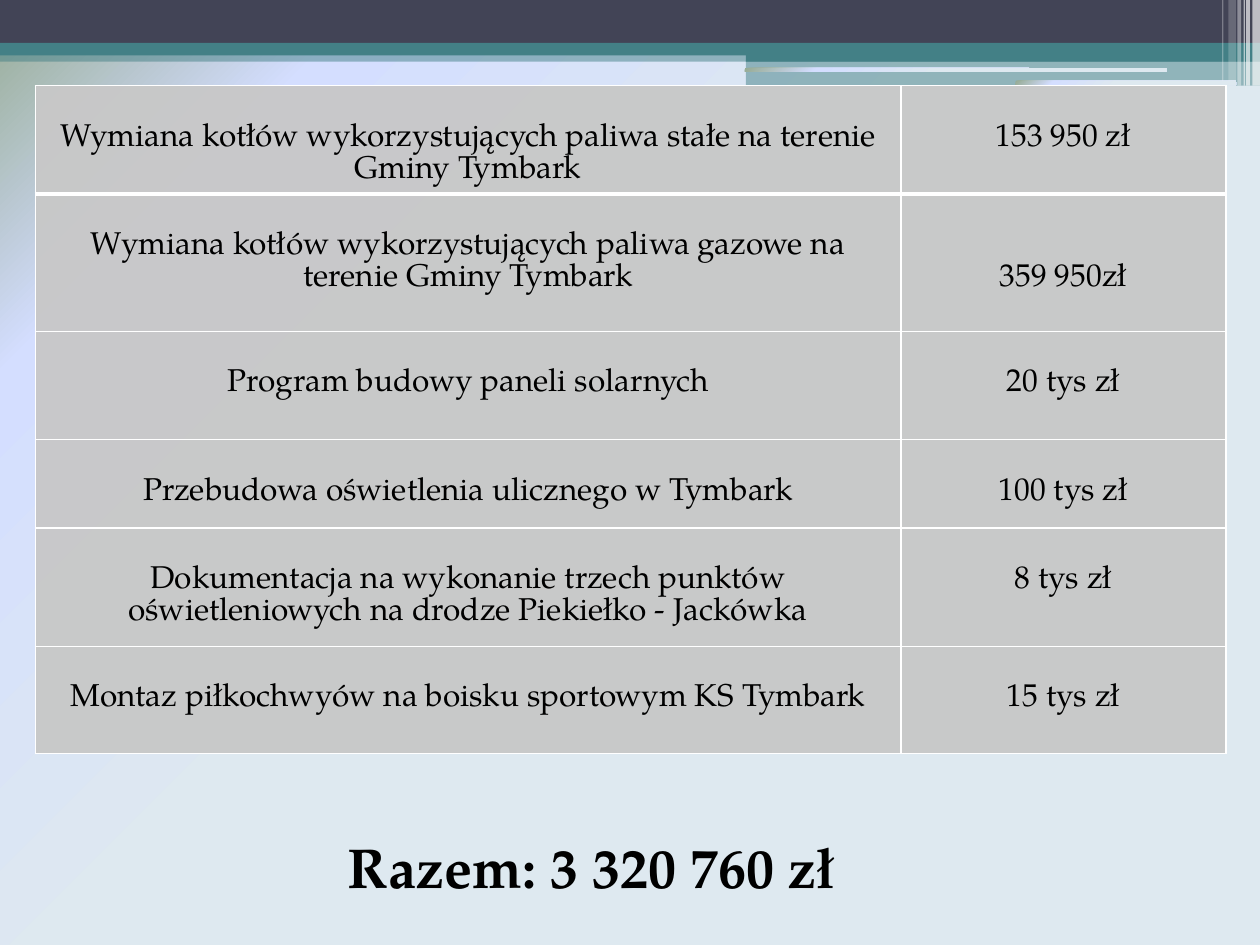
from lxml.etree import SubElement
from pptx import Presentation
from pptx.dml.color import RGBColor
from pptx.enum.shapes import MSO_SHAPE
from pptx.enum.text import PP_ALIGN
from pptx.oxml import parse_xml
from pptx.oxml.ns import nsdecls, qn
from pptx.util import Inches, Pt

COLORS = {"navy": "424456", "teal": "438086", "white": "FFFFFF",
          "cell": "C8C8C8", "text": "000000"}
GRADIENT = [(53, "DEE9F0"), (83, "D4DEFF"), (100, "96AB94")]
FONT = "TeX Gyre Pagella"
BODY_FORMAT = {"name": FONT, "size": Pt(18), "bold": False}
TOTAL_FORMAT = {"name": FONT, "size": Pt(32), "bold": True}

# left, top, width, height, colour, opacity in percent
BANDS = [
    (0, 0.4, 10, 0.09, "teal", 50),
    (0, 0, 10, 0.34, "navy", 100),
    (0, 0.34, 10, 0.1, "teal", 100),
    (5.92, 0.39, 4.08, 0.1, "teal", 100),
    (5.92, 0.48, 4.08, 0.2, "teal", 50),
]
SLOTS = [(5.91, 0.54, 3.35, 0.03), (8.06, 0.64, 1.75, 0.04)]
# left, width, height, opacity in percent
STRIPES = [(9.94, 0.06, 0.68, 65), (9.89, 0.03, 0.68, 65), (9.87, 0.01, 0.68, 60),
           (9.82, 0.03, 0.68, 40), (9.75, 0.06, 0.64, 20), (9.7, 0.01, 0.64, 30)]

TABLE_LEFT, TABLE_TOP = 0.28, 0.68
COLUMN_WIDTHS = [6.87, 2.58]
MARGIN, LINE = 0.05, 0.25
# row height, task, amount, lines left free above the amount
ROWS = [
    (0.86, "Wymiana kotłów wykorzystujących paliwa stałe na terenie Gminy Tymbark",
     "153 950 zł", 1),
    (1.09, "Wymiana kotłów wykorzystujących paliwa gazowe na terenie Gminy Tymbark",
     "359 950zł", 2),
    (0.86, "Program budowy paneli solarnych", "20 tys zł", 1),
    (0.7, "Przebudowa oświetlenia ulicznego w Tymbark", "100 tys zł", 1),
    (0.94, "Dokumentacja na wykonanie trzech punktów oświetleniowych "
           "na drodze Piekiełko - Jackówka", "8 tys zł", 1),
    (0.85, "Montaz piłkochwyów na boisku sportowym KS Tymbark", "15 tys zł", 1),
]


def set_solid(fill, element, color, opacity=100):
    fill.solid()
    fill.fore_color.rgb = RGBColor.from_string(COLORS[color])
    if opacity < 100:
        color_element = element.find(f"{qn('a:solidFill')}/{qn('a:srgbClr')}")
        SubElement(color_element, qn("a:alpha"), val=str(opacity * 1000))


def set_gradient(fill, element):
    """Fill with the theme gradient, radiating from the bottom right corner."""
    fill.solid()
    solid = element.find(f".//{qn('a:solidFill')}")
    stops = "".join(f'<a:gs pos="{position * 1000}"><a:srgbClr val="{color}"/></a:gs>'
                    for position, color in GRADIENT)
    solid.getparent().replace(solid, parse_xml(
        f'<a:gradFill {nsdecls("a")} rotWithShape="1"><a:gsLst>{stops}</a:gsLst>'
        '<a:path path="circle"><a:fillToRect l="100000" t="100000"/></a:path>'
        '</a:gradFill>'))


def add_bar(slide, left, top, width, height, kind=MSO_SHAPE.RECTANGLE):
    shape = slide.shapes.add_shape(
        kind, Inches(left), Inches(top), Inches(width), Inches(height))
    shape.shadow.inherit = False
    shape.line.fill.background()
    return shape


def add_header(slide):
    stripes = [(left, 0, width, height, "white", opacity)
               for left, width, height, opacity in STRIPES]

    def add_solid_bars(bars):
        for *box, color, opacity in bars:
            shape = add_bar(slide, *box)
            set_solid(shape.fill, shape._element.spPr, color, opacity)

    add_solid_bars(BANDS)
    for box in SLOTS:
        slot = add_bar(slide, *box, MSO_SHAPE.ROUNDED_RECTANGLE)
        set_gradient(slot.fill, slot._element.spPr)
    add_solid_bars(stripes)


def write_text(text_frame, text, font_format, alignment):
    paragraph = text_frame.paragraphs[0]
    paragraph.alignment = alignment
    run = paragraph.add_run()
    run.text = text
    run.font.color.rgb = RGBColor.from_string(COLORS["text"])
    for name, value in font_format.items():
        setattr(run.font, name, value)


def set_borders(cell, widths):
    properties = cell._tc.get_or_add_tcPr()
    for side, width in widths.items():
        line = SubElement(properties, qn(f"a:ln{side}"), w=str(Pt(width)))
        solid = SubElement(line, qn("a:solidFill"))
        SubElement(solid, qn("a:srgbClr"), val=COLORS["white"])


def add_cost_table(slide):
    heights = [row[0] for row in ROWS]
    frame = slide.shapes.add_table(
        len(ROWS), len(COLUMN_WIDTHS), Inches(TABLE_LEFT), Inches(TABLE_TOP),
        Inches(sum(COLUMN_WIDTHS)), Inches(sum(heights)))
    table = frame.table
    table.first_row = table.horz_banding = False
    for column, width in zip(table.columns, COLUMN_WIDTHS):
        column.width = Inches(width)
    for index, (height, task, amount, free_lines) in enumerate(ROWS):
        table.rows[index].height = Inches(height)
        borders = {"L": 1, "R": 1, "T": 3 if index == 1 else 1,
                   "B": 3 if index == 0 else 1}
        for column, (text, lines) in enumerate([(task, 1), (amount, free_lines)]):
            cell = table.cell(index, column)
            cell.margin_top = Inches(MARGIN + lines * LINE)
            cell.margin_bottom = Inches(MARGIN)
            set_borders(cell, borders)
            set_solid(cell.fill, cell._tc.tcPr, "cell", 96)
            write_text(cell.text_frame, text, BODY_FORMAT, PP_ALIGN.CENTER)


def add_total(slide):
    box = slide.shapes.add_textbox(
        Inches(2.66), Inches(6.56), Inches(4.45), Inches(0.64))
    box.text_frame.word_wrap = True
    write_text(box.text_frame, "Razem: 3 320 760 zł", TOTAL_FORMAT, PP_ALIGN.LEFT)


def main():
    presentation = Presentation()
    presentation.slide_width = Inches(10)
    presentation.slide_height = Inches(7.5)
    slide = presentation.slides.add_slide(presentation.slide_layouts[6])
    set_gradient(slide.background.fill, slide._element.cSld)
    add_header(slide)
    add_cost_table(slide)
    add_total(slide)
    presentation.save("out.pptx")


if __name__ == "__main__":
    main()
